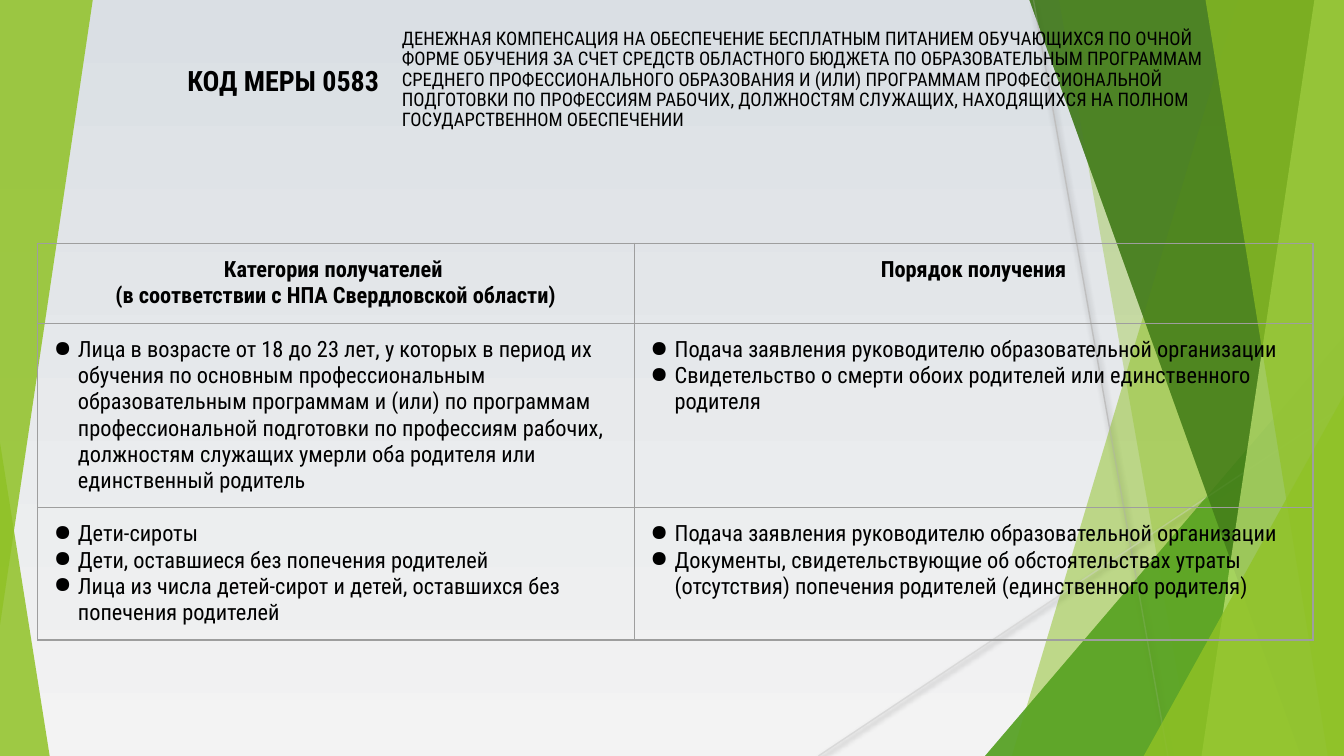
import pptx
import pptx.util
import pptx.dml.color
import pptx.enum.shapes
import pptx.enum.text
import pptx.oxml
import pptx.oxml.ns

# The slide is a grid of 100 columns by 56.25 rows, each a tenth of an inch
COLUMNS, ROWS = 100, 56.25
FONT = "Roboto Condensed"
NS = pptx.oxml.ns.nsdecls("a")
ALIGN = pptx.enum.text.PP_ALIGN
ANCHOR = pptx.enum.text.MSO_ANCHOR
LIME = "90C226"

HEADINGS = ["Категория получателей \v(в соответствии с НПА Свердловской области)",
            "Порядок получения"]
APPLICATION = "Подача заявления руководителю образовательной организации"
MEASURES = [
    (["Лица в возрасте от 18 до 23 лет, у которых в период их обучения по основным "
      "профессиональным образовательным программам и (или) по программам "
      "профессиональной подготовки по профессиям рабочих, должностям служащих "
      "умерли оба родителя или единственный родитель"],
     [APPLICATION,
      "Свидетельство о смерти обоих родителей или единственного родителя"]),
    (["Дети-сироты", "Дети, оставшиеся без попечения родителей",
      "Лица из числа детей-сирот и детей, оставшихся без попечения родителей"],
     [APPLICATION,
      "Документы, свидетельствующие об обстоятельствах утраты (отсутствия) "
      "попечения родителей (единственного родителя)"]),
]
CODE = "КОД МЕРЫ 0583"
TITLE = ("ДЕНЕЖНАЯ КОМПЕНСАЦИЯ НА ОБЕСПЕЧЕНИЕ БЕСПЛАТНЫМ ПИТАНИЕМ ОБУЧАЮЩИХСЯ ПО ОЧНОЙ "
         "ФОРМЕ ОБУЧЕНИЯ ЗА СЧЕТ СРЕДСТВ ОБЛАСТНОГО БЮДЖЕТА ПО ОБРАЗОВАТЕЛЬНЫМ ПРОГРАММАМ "
         "СРЕДНЕГО ПРОФЕССИОНАЛЬНОГО ОБРАЗОВАНИЯ И (ИЛИ) ПРОГРАММАМ ПРОФЕССИОНАЛЬНОЙ "
         "ПОДГОТОВКИ ПО ПРОФЕССИЯМ РАБОЧИХ, ДОЛЖНОСТЯМ СЛУЖАЩИХ, НАХОДЯЩИХСЯ НА ПОЛНОМ "
         "ГОСУДАРСТВЕННОМ ОБЕСПЕЧЕНИИ")


def grid(*cells):
    return [pptx.util.Inches(cell / 10) for cell in cells]


def color(value):
    return pptx.dml.color.RGBColor.from_string(value)


def write(frame, paragraphs, size=12, bold=False, align=ALIGN.LEFT, bullet=None, spacing=None):
    frame.word_wrap = True
    for index, text in enumerate(paragraphs):
        paragraph = frame.add_paragraph() if index else frame.paragraphs[0]
        paragraph.text = text
        paragraph.alignment = align
        if spacing:
            paragraph.line_spacing = spacing
        for run in paragraph.runs:
            run.font.name, run.font.size, run.font.bold = FONT, pptx.util.Pt(size), bold
            run.font.color.rgb = color("000000")
        if bullet:
            properties = paragraph._p.get_or_add_pPr()
            properties.set("marL", str(pptx.util.Inches(0.2)))
            properties.set("indent", str(pptx.util.Inches(-0.18)))
            properties.append(pptx.oxml.parse_xml(f'<a:buChar {NS} char="{bullet}"/>'))


def tint(shape, value, opacity):
    shape.shadow.inherit = False
    shape.line.fill.background()
    shape.fill.solid()
    shape.fill.fore_color.rgb = color(value)
    shade = shape.fill._xPr.find(".//" + pptx.oxml.ns.qn("a:srgbClr"))
    shade.append(pptx.oxml.parse_xml(f'<a:alpha {NS} val="{opacity * 1000}"/>'))


def corner(slide, box, adjust, opacity, value=LIME, turn=0):
    triangle = slide.shapes.add_shape(
        pptx.enum.shapes.MSO_SHAPE.ISOSCELES_TRIANGLE, *grid(*box))
    triangle.adjustments[0] = adjust
    triangle.rotation = turn
    tint(triangle, value, opacity)


def shards(slide, box):
    left, top, width, height = box
    right, bottom = left + width, top + height

    def shard(upper, lower, value, opacity):
        builder = slide.shapes.build_freeform(*grid(left + upper, top))
        builder.add_line_segments([grid(right, top), grid(right, bottom),
                                   grid(left + lower, bottom)], close=True)
        tint(builder.convert_to_shape(), value, opacity)

    def wedge(x, y, value, opacity):
        corner(slide, (left + x, top + y, width - x, height - y), 1, opacity, value)

    shard(18.8, 2, LIME, 30)
    shard(5.5, 15.4, LIME, 20)
    wedge(0, 25, "54A021", 72)
    shard(3.3, 23.5, "3F7819", 70)
    shard(24.5, 16.1, "C0E474", 70)
    shard(16.4, 25.5, LIME, 65)
    wedge(11.8, 29.4, LIME, 80)


def rays(slide, box):
    left, top, width, height = box
    for x1, y1, x2, value in [(3.6, 0, 13.6, "BFBFBF"), (width, 30.2, -12.4, "D9D9D9")]:
        ray = slide.shapes.add_connector(
            pptx.enum.shapes.MSO_CONNECTOR.STRAIGHT,
            *grid(left + x1, top + y1, left + x2, top + height))
        ray.line.color.rgb = color(value)
        ray.line.width = pptx.util.Pt(0.75)
        ray._element.spPr.append(pptx.oxml.parse_xml(
            f'<a:effectLst {NS}><a:outerShdw blurRad="{pptx.util.Pt(3.1)}" '
            f'dist="{pptx.util.Pt(1.6)}" dir="5400000" rotWithShape="0">'
            '<a:srgbClr val="000000"><a:alpha val="38000"/></a:srgbClr>'
            '</a:outerShdw></a:effectLst>'))


def heading(slide, box, code_width):
    left, top, width, height = box
    parts = [
        (left + code_width, width - code_width, TITLE, (0.07, 0.04),
         dict(size=10, spacing=0.9)),
        (left, code_width, CODE, (0.1, 0.1), dict(size=15, bold=True, align=ALIGN.RIGHT)),
    ]
    for x, part_width, text, (side, edge), style in parts:
        frame = slide.shapes.add_textbox(*grid(x, top, part_width, height)).text_frame
        frame.margin_left = frame.margin_right = pptx.util.Inches(side)
        frame.margin_top = frame.margin_bottom = pptx.util.Inches(edge)
        frame.vertical_anchor = ANCHOR.MIDDLE
        write(frame, [text], **style)


def table_cell(cell, paragraphs, **style):
    cell.margin_left = cell.margin_right = pptx.util.Inches(0.1)
    cell.margin_top = cell.margin_bottom = pptx.util.Inches(0.1)
    write(cell.text_frame, paragraphs, **style)
    properties = cell._tc.get_or_add_tcPr()
    for side in "LRTB":
        properties.append(pptx.oxml.parse_xml(
            f'<a:ln{side} {NS} w="{pptx.util.Pt(0.75)}"><a:solidFill>'
            f'<a:srgbClr val="9E9E9E"/></a:solidFill></a:ln{side}>'))
    cell.fill.background()


def measures_table(slide, box, widths, heights):
    table = slide.shapes.add_table(len(heights), len(widths), *grid(*box)).table
    table.first_row = table.horz_banding = False
    for column, width in zip(table.columns, grid(*widths)):
        column.width = width
    for row, height in zip(table.rows, grid(*heights)):
        row.height = height
    for index, text in enumerate(HEADINGS):
        table_cell(table.cell(0, index), [text], bold=True, align=ALIGN.CENTER)
    for row, measure in enumerate(MEASURES, 1):
        for index, items in enumerate(measure):
            table_cell(table.cell(row, index), items, bullet="●")


def main():
    deck = pptx.Presentation()
    deck.slide_width, deck.slide_height = grid(COLUMNS, ROWS)
    slide = deck.slides.add_slide(deck.slide_layouts[6])

    # Background gradient, top to bottom
    backdrop = slide.background.fill
    backdrop.gradient()
    backdrop.gradient_angle = 270
    for stop, value in zip(backdrop.gradient_stops, ["DADFE4", "F3F3F3"]):
        stop.color.rgb = color(value)

    # Green facets: two layers on the right with rays between, corners on the left
    panel = (73.3, 0, COLUMNS - 73.3, ROWS)
    shards(slide, panel)
    corner(slide, (0, 32.9, 3.7, ROWS - 32.9), 0, 85)
    rays(slide, panel)
    shards(slide, panel)
    corner(slide, (0, 0, 6.9, 46.5), 1, 85, turn=180)

    # Content
    measures_table(slide, (2.8, 18.1, 94.9, 29.5), (44.4, 50.5), (5.95, 13.7, 9.85))
    heading(slide, (8.2, 2.2, 85.1, 7.5), 21)
    deck.save("out.pptx")


if __name__ == "__main__":
    main()
